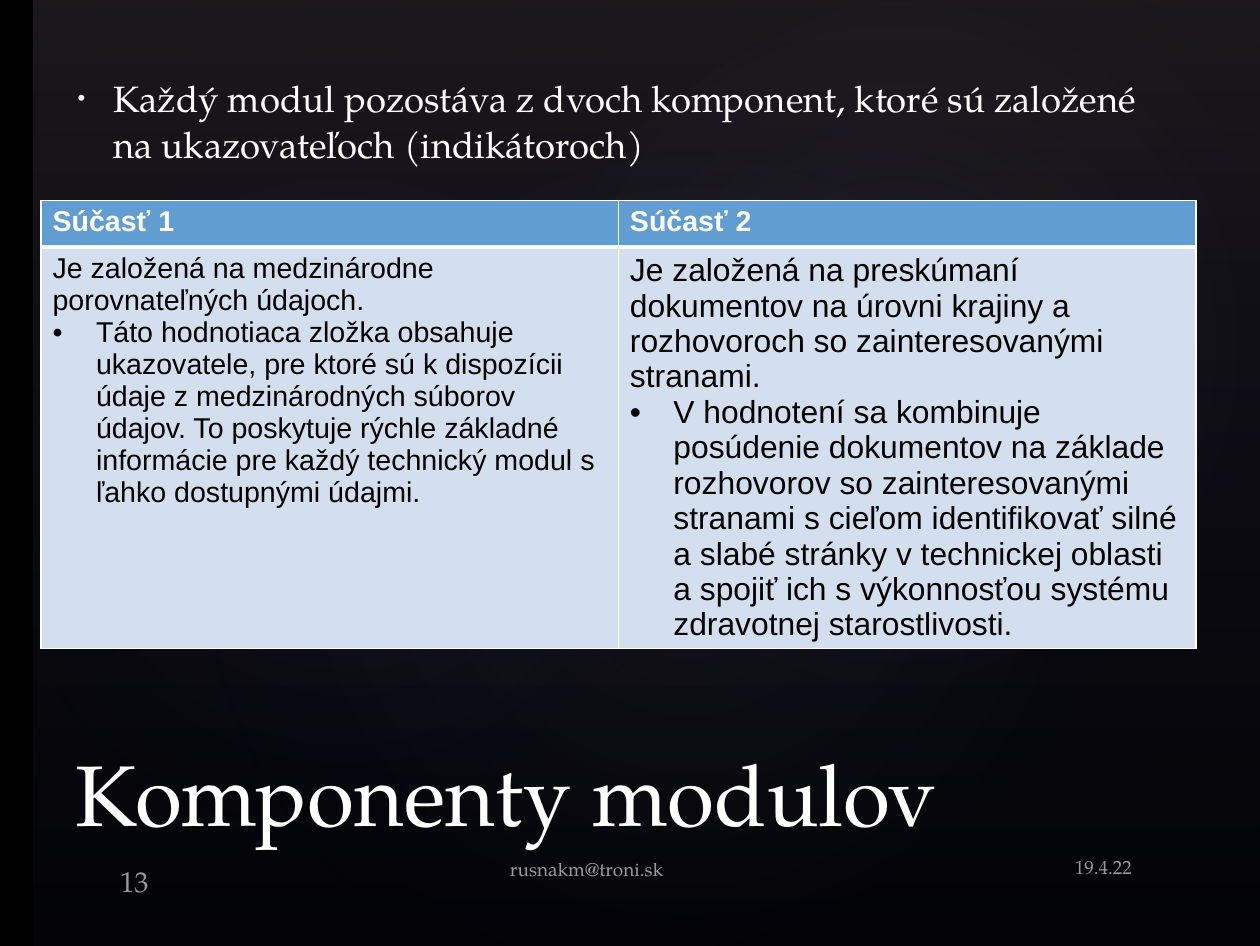
"""Build the slide on the two components of each module."""
import pptx
import pptx.util
import pptx.dml.color
import pptx.enum.shapes
import pptx.enum.text
import pptx.oxml
from lxml import etree

TITLE = "Komponenty modulov"
LEAD = "Každý modul pozostáva z dvoch komponent, ktoré sú založené na ukazovateľoch (indikátoroch)"
PARTS = [
    ("Súčasť 1", 18, "Je založená na medzinárodne porovnateľných údajoch.",
     "Táto hodnotiaca zložka obsahuje ukazovatele, pre ktoré sú k dispozícii údaje "
     "z medzinárodných súborov údajov. To poskytuje rýchle základné informácie "
     "pre každý technický modul s ľahko dostupnými údajmi."),
    ("Súčasť 2", 20, "Je založená na preskúmaní dokumentov na úrovni krajiny a "
     "rozhovoroch so zainteresovanými stranami.",
     "V hodnotení sa kombinuje posúdenie dokumentov na základe rozhovorov so "
     "zainteresovanými stranami s cieľom identifikovať silné a slabé stránky v "
     "technickej oblasti a spojiť ich s výkonnosťou systému zdravotnej starostlivosti."),
]
FOOT = [
    ("19.4.22", (9.12, 7.42, 0.89, 0.44), 12, "RIGHT", "TOP", 0.06),
    ("rusnakm@troni.sk", (4.35, 7.44, 2.26, 0.44), 12, "LEFT", "TOP", 0.06),
    ("13", (0.94, 7.48, 0.9, 0.38), 18, "LEFT", "BOTTOM", 0.01),
]
GLOWS = [
    ((1.65, 1.25, 8.73, 6.88), 328.7, 7),
    ((-0.33, 1.41, 6.68, 5.4), 294.3, 8),
    ((3.95, 0.14, 7.81, 5.73), 328.7, 8),
]
HEX = {"back": "000000", "text": "FFFFFF", "ink": "000000", "head": "629DD1",
       "cell": "D3DFEE", "veil": "504652", "navy": "242852", "glow": "C4BCC6"}
SERIF, SANS = "TeX Gyre Pagella", "Arial"
WIDE, HIGH = 11.02, 8.27
EDGE, SPAN = 0.55, 9.91
NS = "http://schemas.openxmlformats.org/drawingml/2006/main"
inch = pptx.util.Inches
kinds = pptx.enum.shapes.MSO_SHAPE
anchors = pptx.enum.text.MSO_ANCHOR


def tint(name):
    return pptx.dml.color.RGBColor.from_string(HEX[name])


def node(xml):
    return pptx.oxml.parse_xml(xml.replace(" ", f' xmlns:a="{NS}" ', 1))


def place(shape, box):
    shape.left, shape.top, shape.width, shape.height = map(inch, box)


def style(para, face, size, color, bold=False):
    font = para.font
    font.name, font.size, font.bold = face, pptx.util.Pt(size), bold
    font.color.rgb = tint(color)


def bullet(para, left, hang, share=100):
    props = para._p.get_or_add_pPr()
    props.set("marL", str(inch(left)))
    props.set("indent", str(inch(-hang)))
    props.append(node(f'<a:buSzPct val="{share * 1000}"/>'))
    props.append(node('<a:buFont typeface="Arial"/>'))
    props.append(node('<a:buChar char="•"/>'))


def setup(frame, anchor, low=0.06):
    frame.word_wrap = True
    frame.auto_size = pptx.enum.text.MSO_AUTO_SIZE.NONE
    frame.vertical_anchor = anchors[anchor]
    frame.margin_left = frame.margin_right = inch(0.11)
    frame.margin_top, frame.margin_bottom = inch(0.06), inch(low)
    return frame.paragraphs[0]


def haze(slide, kind, box, stops, path, turn=0):
    shape = slide.shapes.add_shape(kind, *map(inch, box))
    shape.rotation = turn
    shape.shadow.inherit = False
    shape.line.fill.background()
    shape.fill.gradient()
    grad = shape._element.spPr.find(f"{{{NS}}}gradFill")
    marks = "".join(
        f'<a:gs pos="{pos * 1000}"><a:srgbClr val="{HEX[name]}">'
        f'<a:alpha val="{alpha * 1000}"/></a:srgbClr></a:gs>'
        for pos, name, alpha in stops)
    fresh = node(f'<a:gradFill rotWithShape="1"><a:gsLst>{marks}</a:gsLst>{path}</a:gradFill>')
    grad.getparent().replace(grad, fresh)


def edge(cell, low):
    props = cell._tc.get_or_add_tcPr()
    for spot, (side, width) in enumerate([("L", 1), ("R", 1), ("T", 1), ("B", low)]):
        props.insert(spot, node(
            f'<a:ln{side} w="{width * 12700}"><a:solidFill><a:srgbClr val="{HEX["text"]}"/>'
            f'</a:solidFill></a:ln{side}>'))


def backdrop(slide):
    slide.background.fill.solid()
    slide.background.fill.fore_color.rgb = tint("back")
    haze(slide, kinds.RECTANGLE, (0.29, 0, WIDE - 0.29, HIGH),
         [(0, "veil", 36), (100, "navy", 10)], '<a:lin ang="5400000" scaled="0"/>')
    ring = ('<a:path path="circle"><a:fillToRect l="50000" t="50000" '
            'r="50000" b="50000"/></a:path>')
    for box, turn, alpha in GLOWS:
        haze(slide, kinds.OVAL, box, [(0, "glow", alpha), (58, "navy", 0)], ring, turn)


def heading(slide):
    title = slide.shapes.title
    place(title, (EDGE, 6.16, SPAN, 1.28))
    para = setup(title.text_frame, "BOTTOM")
    para.text = TITLE
    para.alignment = pptx.enum.text.PP_ALIGN.LEFT
    para.line_spacing = 1.04
    style(para, SERIF, 54, "text")
    tree = slide.shapes._spTree
    tree.remove(title._element)
    tree.append(title._element)


def lead(slide):
    box = slide.shapes.add_textbox(*map(inch, (EDGE, 0.34, SPAN, 1.42)))
    para = setup(box.text_frame, "MIDDLE")
    para.text = LEAD
    para.line_spacing = 1.04
    bullet(para, 0.33, 0.31, 60)
    style(para, SERIF, 23, "text")


def footer(slide):
    for text, spot, size, align, anchor, low in FOOT:
        box = slide.shapes.add_textbox(*map(inch, spot))
        para = setup(box.text_frame, anchor, low)
        para.text = text
        para.alignment = pptx.enum.text.PP_ALIGN[align]
        style(para, SERIF, size, "text")
        color = next(para._p.iter(f"{{{NS}}}srgbClr"))
        etree.SubElement(color, f"{{{NS}}}alpha", val="60000")


def grid(slide):
    rows = (0.41, 3.51)
    table = slide.shapes.add_table(
        2, len(PARTS), *map(inch, (0.36, 1.75, 10.1, sum(rows)))).table
    for row, high in zip(table.rows, rows):
        row.height = inch(high)
    for col, (head, size, intro, detail) in enumerate(PARTS):
        top, body = table.cell(0, col), table.cell(1, col)
        for cell, fill, low in ((top, "head", 3), (body, "cell", 1)):
            cell.fill.solid()
            cell.fill.fore_color.rgb = tint(fill)
            edge(cell, low)
        top.text = head
        style(top.text_frame.paragraphs[0], SANS, 18, "text", True)
        body.text = f"{intro}\n{detail}"
        first, second = body.text_frame.paragraphs
        bullet(second, 0.38, 0.38)
        for para in (first, second):
            style(para, SANS, size, "ink")


def main():
    deck = pptx.Presentation()
    deck.slide_width, deck.slide_height = inch(WIDE), inch(HIGH)
    slide = deck.slides.add_slide(deck.slide_layouts[5])
    for build in (backdrop, heading, lead, footer, grid):
        build(slide)
    deck.save("out.pptx")


if __name__ == "__main__":
    main()
